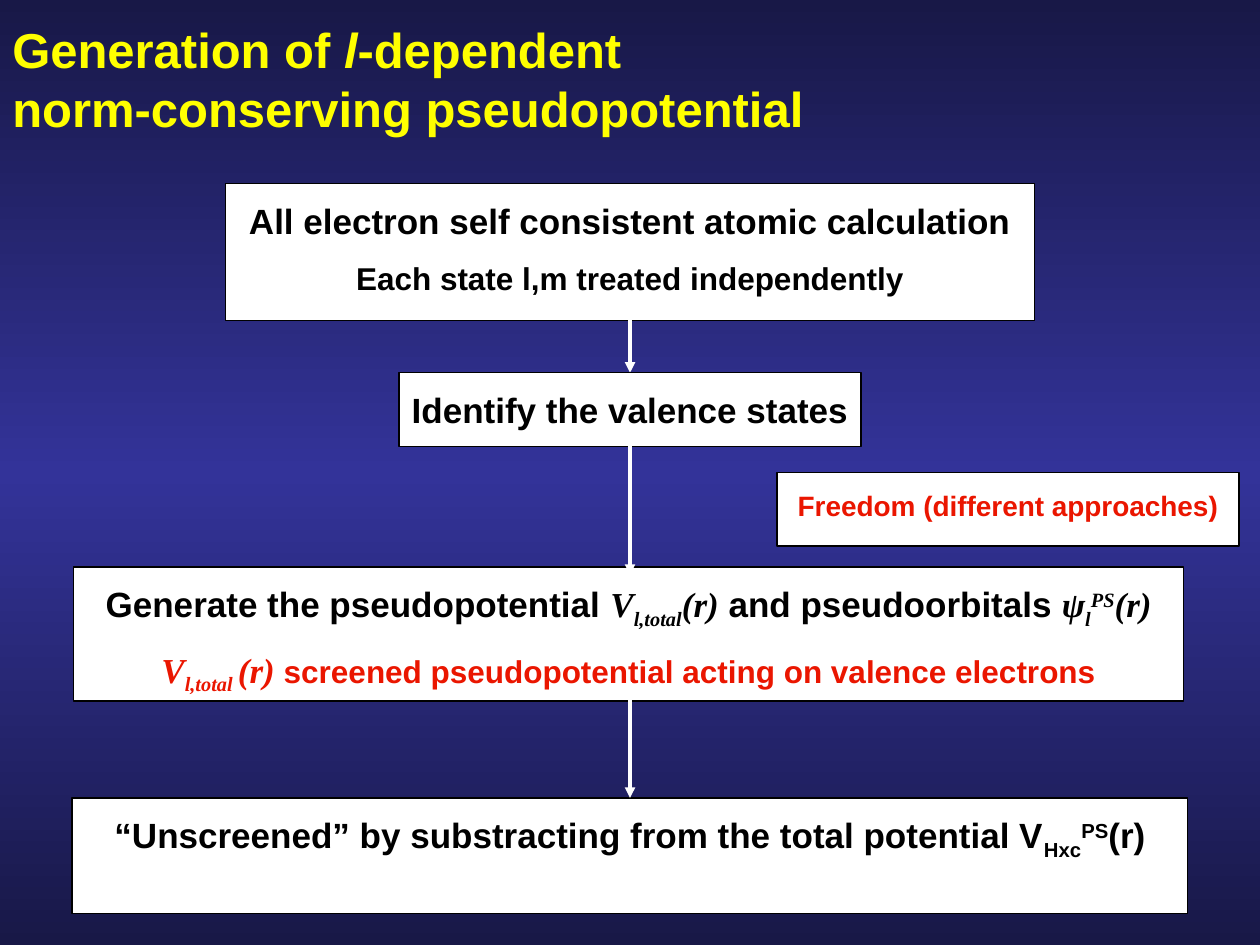
from copy import deepcopy
from dataclasses import dataclass

from pptx import Presentation
from pptx.dml.color import RGBColor as RGB
from pptx.enum.shapes import MSO_CONNECTOR as LINK, MSO_SHAPE as SHAPE
from pptx.enum.text import MSO_ANCHOR as ANCHOR, PP_ALIGN as ALIGN
from pptx.oxml.ns import qn
from pptx.oxml.xmlchemy import OxmlElement as Node
from pptx.util import Inches, Pt


@dataclass(frozen=True)
class Theme:
    dark: RGB = RGB.from_string("181847")
    glow: RGB = RGB.from_string("333399")
    gold: RGB = RGB.from_string("FFFF00")
    red: RGB = RGB.from_string("EA1600")
    white: RGB = RGB.from_string("FFFFFF")
    black: RGB = RGB.from_string("000000")
    sans: str = "Arial"
    serif: str = "Times New Roman"
    title: int = 28
    body: int = 20
    minor: int = 18
    note: int = 16
    gap: int = 10
    edge: float = 0.75
    arrow: float = 2


T = Theme()
COLS, ROWS = 240, 180  # 24 cells to the inch
MID = COLS / 2
SUB, SUP = -25000, 30000
BREAK = "\n"


def cell(*spans):
    return [Inches(n / 24) for n in spans]


def plain(text, size=T.body):
    return text, T.sans, size, False, 0


def math(text, base=0, size=T.body):
    return text, T.serif, size, True, base


def write(par, runs, color):
    for text, face, size, slant, base in runs:
        if text == BREAK:
            par.add_line_break()
            continue
        run = par.add_run()
        run.text = text
        font = run.font
        font.name, font.size = face, Pt(size)
        font.bold, font.italic = True, slant
        font.color.rgb = color
        if base:
            run._r.get_or_add_rPr().set("baseline", str(base))


def backdrop(slide):
    fill = slide.background.fill
    fill.gradient()
    fill.gradient_angle = 270
    stops = slide._element.find(".//" + qn("a:gsLst"))
    stops.insert(1, deepcopy(stops[0]))
    marks = ((0, T.dark), (0.5, T.glow), (1, T.dark))
    for stop, (pos, color) in zip(fill.gradient_stops, marks):
        stop.position = pos
        stop.color.rgb = color


def title(slide, runs):
    frame = slide.shapes.add_textbox(*cell(0, 0, 158, 30)).text_frame
    frame.word_wrap = True
    frame.vertical_anchor = ANCHOR.MIDDLE
    write(frame.paragraphs[0], runs, T.gold)


def panel(slide, left, top, wide, high, *lines):
    """White box; each line is a colour and its runs."""
    box = slide.shapes.add_shape(SHAPE.FLOWCHART_PROCESS,
                                 *cell(left, top, wide, high))
    box.shadow.inherit = False
    box.fill.solid()
    box.fill.fore_color.rgb = T.white
    box.line.color.rgb = T.black
    box.line.width = Pt(T.edge)
    frame = box.text_frame
    frame.word_wrap = True
    frame.vertical_anchor = ANCHOR.TOP
    frame.margin_top, = cell(3)
    for i, (color, runs) in enumerate(lines):
        par = frame.add_paragraph() if i else frame.paragraphs[0]
        par.alignment = ALIGN.CENTER
        if i:
            par.space_before = Pt(T.gap)
        write(par, runs, color)


def arrow(slide, start, end):
    link = slide.shapes.add_connector(LINK.STRAIGHT,
                                      *cell(MID, start, MID, end))
    link.line.color.rgb = T.white
    link.line.width = Pt(T.arrow)
    tail = Node("a:tailEnd")
    tail.set("type", "triangle")
    link.line._get_or_add_ln().append(tail)
    link._element.spPr.append(Node("a:effectLst"))


def main():
    deck = Presentation()
    deck.slide_width, deck.slide_height = cell(COLS, ROWS)
    slide = deck.slides.add_slide(deck.slide_layouts[6])
    backdrop(slide)

    # Heading
    title(slide, [plain("Generation of ", T.title),
                  ("l", T.sans, T.title, True, 0),
                  plain("-dependent", T.title),
                  plain(BREAK),
                  plain("norm-conserving pseudopotential", T.title)])

    # Side remark
    panel(slide, 148, 90, 88, 14,
          (T.red, [plain("Freedom (different approaches)", T.note)]))

    # Atomic calculation
    panel(slide, 43, 35, 154, 26,
          (T.black, [plain("All electron self consistent atomic calculation")]),
          (T.black, [plain("Each state l,m treated independently", T.minor)]))

    # Valence states
    arrow(slide, 61, 71)
    panel(slide, 76, 71, 88, 14,
          (T.black, [plain("Identify the valence states")]))

    # Pseudopotential
    panel(slide, 14, 108, 211.5, 25.5,
          (T.black, [plain("Generate the pseudopotential "),
                     math("V"), math("l,total", SUB), math("(r)"),
                     plain(" and pseudoorbitals "),
                     math("ψ"), math("l", SUB), math("PS", SUP),
                     math("(r)")]),
          (T.red, [math("V"), math("l,total ", SUB), math("(r)"),
                   plain(" screened pseudopotential acting on valence "
                         "electrons", T.minor)]))
    arrow(slide, 83.5, 109.5)

    # Unscreening
    panel(slide, 13.75, 152, 212.5, 22,
          (T.black, [plain("“Unscreened” by substracting from the total "
                           "potential V"),
                     ("Hxc", T.sans, T.body, False, SUB),
                     ("PS", T.sans, T.body, False, SUP),
                     plain("(r)")]))
    arrow(slide, 130, 152)

    deck.save("out.pptx")


if __name__ == "__main__":
    main()
